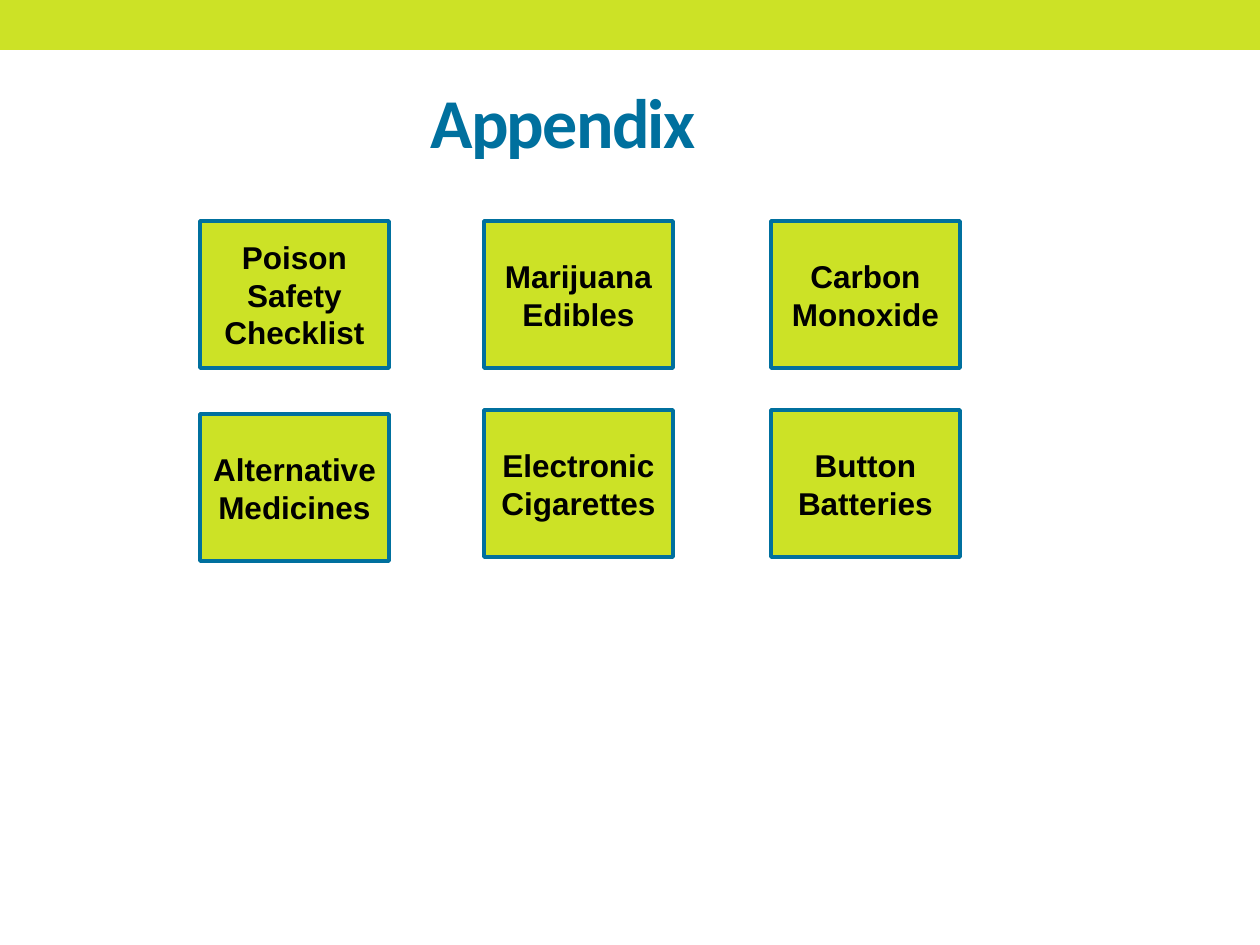
from pptx import Presentation
from pptx.dml.color import RGBColor
from pptx.enum.shapes import MSO_SHAPE as Shape
from pptx.enum.text import MSO_ANCHOR as Anchor, PP_ALIGN as Align
from pptx.util import Emu, Pt

EMU_PER_PX = 914400 / 126
COLORS = {"lime": "CCE226", "blue": "00709E", "black": "000000"}

BUTTON_WIDTH, BUTTON_HEIGHT = 189, 147
# Each column: left edge, then (top edge, label) for every button.
BUTTON_COLUMNS = [
    (200, [(221, "Poison Safety Checklist"), (414, "Alternative Medicines")]),
    (484, [(221, "Marijuana Edibles"), (410, "Electronic Cigarettes")]),
    (771, [(221, "Carbon Monoxide"), (410, "Button Batteries")]),
]


def px(length):
    return Emu(round(length * EMU_PER_PX))


def color(name):
    return RGBColor.from_string(COLORS[name])


def set_text(shape, text, font_name, size, color_name):
    """Fill the shape with one bold, centred paragraph."""
    frame = shape.text_frame
    frame.text = text
    frame.word_wrap = True
    frame.vertical_anchor = Anchor.MIDDLE
    paragraph = frame.paragraphs[0]
    paragraph.alignment = Align.CENTER
    run = paragraph.runs[0]
    run.font.name = font_name
    run.font.size = Pt(size)
    run.font.bold = True
    run.font.color.rgb = color(color_name)
    return run


def add_filled_shape(slide, kind, left, top, width, height):
    shape = slide.shapes.add_shape(kind, px(left), px(top), px(width), px(height))
    shape.shadow.inherit = False
    shape.fill.solid()
    shape.fill.fore_color.rgb = color("lime")
    return shape


def add_top_band(slide):
    band = add_filled_shape(slide, Shape.RECTANGLE, 0, 0, 1260, 50)
    band.line.fill.background()


def format_title(slide, text):
    title = slide.shapes.title
    title.left, title.top = px(42), px(63)
    title.width, title.height = px(1042), px(116)
    run = set_text(title, text, "Calibri", 40, "blue")
    run.font._element.set("spc", "-100")


def add_button(slide, left, top, label):
    button = add_filled_shape(
        slide, Shape.ACTION_BUTTON_CUSTOM, left, top, BUTTON_WIDTH, BUTTON_HEIGHT
    )
    button.line.color.rgb = color("blue")
    button.line.width = Pt(2.08)
    set_text(button, label, "Arial", 18, "black")
    button.text_frame.margin_left = button.text_frame.margin_right = px(6)


def main():
    presentation = Presentation()
    presentation.slide_width, presentation.slide_height = px(1260), px(945)
    slide = presentation.slides.add_slide(presentation.slide_layouts[5])
    add_top_band(slide)
    format_title(slide, "Appendix")
    for left, buttons in BUTTON_COLUMNS:
        for top, label in buttons:
            add_button(slide, left, top, label)
    presentation.save("out.pptx")


if __name__ == "__main__":
    main()
